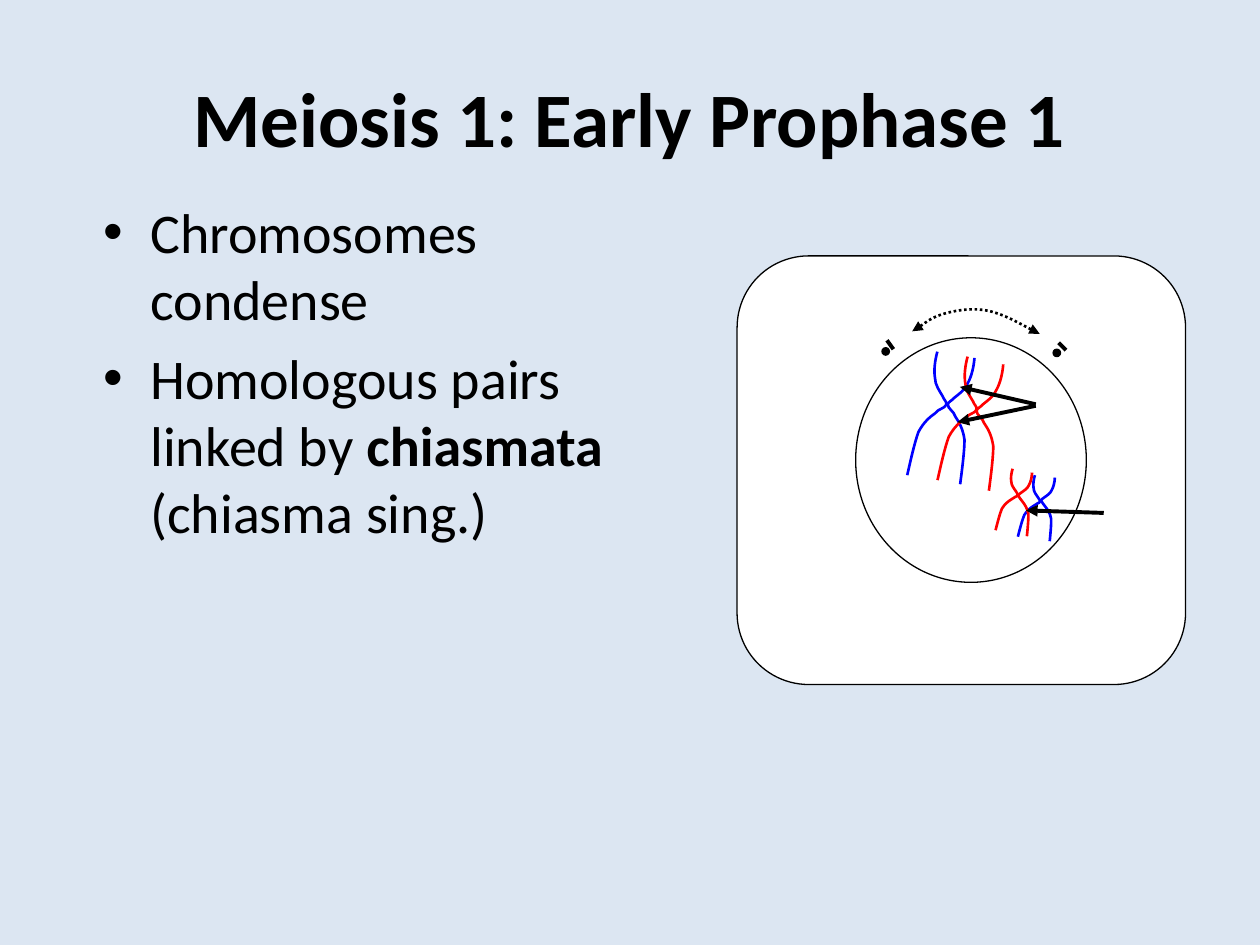
from dataclasses import dataclass

from lxml import etree
from pptx import Presentation
from pptx.dml.color import RGBColor
from pptx.enum.dml import MSO_LINE
from pptx.enum.shapes import MSO_CONNECTOR, MSO_SHAPE
from pptx.enum.text import MSO_ANCHOR, PP_ALIGN
from pptx.oxml.ns import qn
from pptx.util import Cm, Pt

STRAIGHT = MSO_CONNECTOR.STRAIGHT
OVAL, ROUNDED = MSO_SHAPE.OVAL, MSO_SHAPE.ROUNDED_RECTANGLE
DOTTED = MSO_LINE.ROUND_DOT
FONT = "Calibri"
BLACK, WHITE, BLUE, RED = "000000", "FFFFFF", "0000FF", "FF0000"
TILT = 20.2  # degrees, second chromatid of each chromosome

# Bezier points of one chromatid, in percent of its box
CHROMATID = [
    (75, 0), (69, 7), (66, 15), (69, 21), (69, 27), (81, 32), (88, 36),
    (91, 39), (100, 41), (97, 43), (94, 46), (78, 46), (69, 50), (56, 53),
    (41, 57), (28, 65), (19, 73), (9, 87), (0, 100),
]
# Bezier points of the arc between the centrosomes, in cm
ARC = [
    (18.39, 6.68), (18.49, 6.63), (18.77, 6.4), (19.05, 6.32), (19.3, 6.25),
    (19.63, 6.2), (19.94, 6.27), (20.27, 6.35), (20.75, 6.63), (20.96, 6.73),
]


@dataclass
class Chromosome:
    color: str
    left: float
    top: float
    width: float
    height: float
    shift_x: float  # offset of the second chromatid
    shift_y: float


@dataclass
class Segment:
    start: tuple[float, float]
    end: tuple[float, float]
    tip: bool = False


CHROMOSOMES = [
    Chromosome(BLUE, 18.29, 7.09, 0.81, 2.49, 0.71, 0.12),
    Chromosome(RED, 18.9, 7.19, 0.81, 2.49, 0.68, 0.15),
    Chromosome(BLUE, 20.52, 9.58, 0.46, 1.24, 0.41, 0.05),
    Chromosome(RED, 20.07, 9.45, 0.46, 1.24, 0.4, 0.08),
]
CENTRIOLE_RODS = [
    Segment((21.34, 6.91), (21.49, 7.06)),
    Segment((17.88, 6.86), (18.01, 7.04)),
]
CENTRIOLE_DOTS = [(21.23, 7.04), (17.78, 7.01)]
CHIASMA_ARROWS = [
    Segment((20.88, 8.18), (19.3, 8.51), True),
    Segment((20.88, 8.15), (19.35, 7.8), True),
    Segment((22.25, 10.34), (20.68, 10.29), True),
]


def rgb(color: str) -> RGBColor:
    return RGBColor.from_string(color)


def style_line(shape, color: str, width: float) -> None:
    shape.line.color.rgb = rgb(color)
    shape.line.width = Pt(width)


def add_tip(shape, end: str) -> None:
    line = shape.line._get_or_add_ln()
    etree.SubElement(line, qn(f"a:{end}"), type="triangle")


def draw_shape(page, kind, left: float, top: float, width: float,
               height: float, fill: str):
    shape = page.shapes.add_shape(kind, Cm(left), Cm(top), Cm(width), Cm(height))
    shape.shadow.inherit = False
    shape.fill.solid()
    shape.fill.fore_color.rgb = rgb(fill)
    style_line(shape, BLACK, 0.75)
    return shape


def draw_segment(page, segment: Segment) -> None:
    ends = [Cm(value) for value in (*segment.start, *segment.end)]
    connector = page.shapes.add_connector(STRAIGHT, *ends)
    style_line(connector, BLACK, 2.25)
    if segment.tip:
        add_tip(connector, "tailEnd")
    etree.SubElement(connector._element.spPr, qn("a:effectLst"))


def draw_curve(page, points: list[tuple[float, float]], color: str):
    corners = [(Cm(x), Cm(y)) for x, y in points]
    builder = page.shapes.build_freeform(*corners[0])
    builder.add_line_segments(corners[1:], close=False)
    curve = builder.convert_to_shape()
    # Merge every three straight steps into one Bezier step
    outline = curve._element.find(".//" + qn("a:path"))
    steps = outline.findall(qn("a:lnTo"))
    for first in range(0, len(steps), 3):
        bezier = etree.SubElement(outline, qn("a:cubicBezTo"))
        for step in steps[first:first + 3]:
            bezier.append(step[0])
            outline.remove(step)
    curve.shadow.inherit = False
    curve.fill.background()
    style_line(curve, color, 1.5)
    return curve


def draw_chromosome(page, item: Chromosome) -> None:
    first = [(item.left + item.width * x / 100, item.top + item.height * y / 100)
             for x, y in CHROMATID]
    mirror = 2 * item.left + item.width + item.shift_x
    second = [(mirror - x, y + item.shift_y) for x, y in first]
    draw_curve(page, first, item.color)
    draw_curve(page, second, item.color).rotation = TILT


def add_bullet(paragraph) -> None:
    properties = paragraph._p.get_or_add_pPr()
    properties.set("marL", str(Cm(0.95)))
    properties.set("indent", str(-Cm(0.95)))
    etree.SubElement(properties, qn("a:buFont"), typeface="Arial")
    etree.SubElement(properties, qn("a:buChar"), char="•")


def set_font(paragraph, size: float, bold: bool = False) -> None:
    font = paragraph.font
    font.name, font.size, font.bold = FONT, Pt(size), bold
    font.color.rgb = rgb(BLACK)


def write_title(page) -> None:
    title = page.shapes.title
    title.left, title.top = Cm(1.27), Cm(0.76)
    title.width, title.height = Cm(22.86), Cm(3.18)
    title.text_frame.text = "Meiosis 1: Early Prophase 1"
    title.text_frame.vertical_anchor = MSO_ANCHOR.MIDDLE
    para = title.text_frame.paragraphs[0]
    para.alignment = PP_ALIGN.CENTER
    set_font(para, 44, bold=True)


def write_body(page) -> None:
    box = page.shapes.add_textbox(Cm(1.83), Cm(3.86), Cm(12.29), Cm(13.82))
    frame = box.text_frame
    frame.word_wrap = True
    condense, linked = frame.paragraphs[0], frame.add_paragraph()
    condense.add_run().text = "Chromosomes condense"
    for text, bold in [("Homologous pairs linked by ", False),
                       ("chiasmata ", True), ("(chiasma sing.)", False)]:
        span = linked.add_run()
        span.text = text
        span.font.bold = bold
    linked.space_before = Pt(6.4)
    for para in (condense, linked):
        add_bullet(para)
        set_font(para, 32)


def draw_cell(page) -> None:
    # Cell and nucleus
    cell = draw_shape(page, ROUNDED, 14.86, 5.16, 9.04, 8.64, WHITE)
    cell.adjustments[0] = 0.167
    draw_shape(page, OVAL, 17.25, 6.81, 4.65, 4.93, WHITE)
    # Centrioles
    for rod, (left, top) in zip(CENTRIOLE_RODS, CENTRIOLE_DOTS):
        draw_segment(page, rod)
        draw_shape(page, OVAL, left, top, 0.15, 0.15, BLACK)
    # Chromosomes
    for item in CHROMOSOMES:
        draw_chromosome(page, item)
    # Centrosomes moving apart
    arc = draw_curve(page, ARC, BLACK)
    arc.line.dash_style = DOTTED
    for end in ("headEnd", "tailEnd"):
        add_tip(arc, end)
    # Pointers to the chiasmata
    for arrow in CHIASMA_ARROWS:
        draw_segment(page, arrow)


def main() -> None:
    deck = Presentation()
    deck.slide_width, deck.slide_height = Cm(25.4), Cm(19.05)
    page = deck.slides.add_slide(deck.slide_layouts[5])
    page.background.fill.solid()
    page.background.fill.fore_color.rgb = rgb("DCE6F2")
    write_title(page)
    write_body(page)
    draw_cell(page)
    deck.save("out.pptx")


if __name__ == "__main__":
    main()
